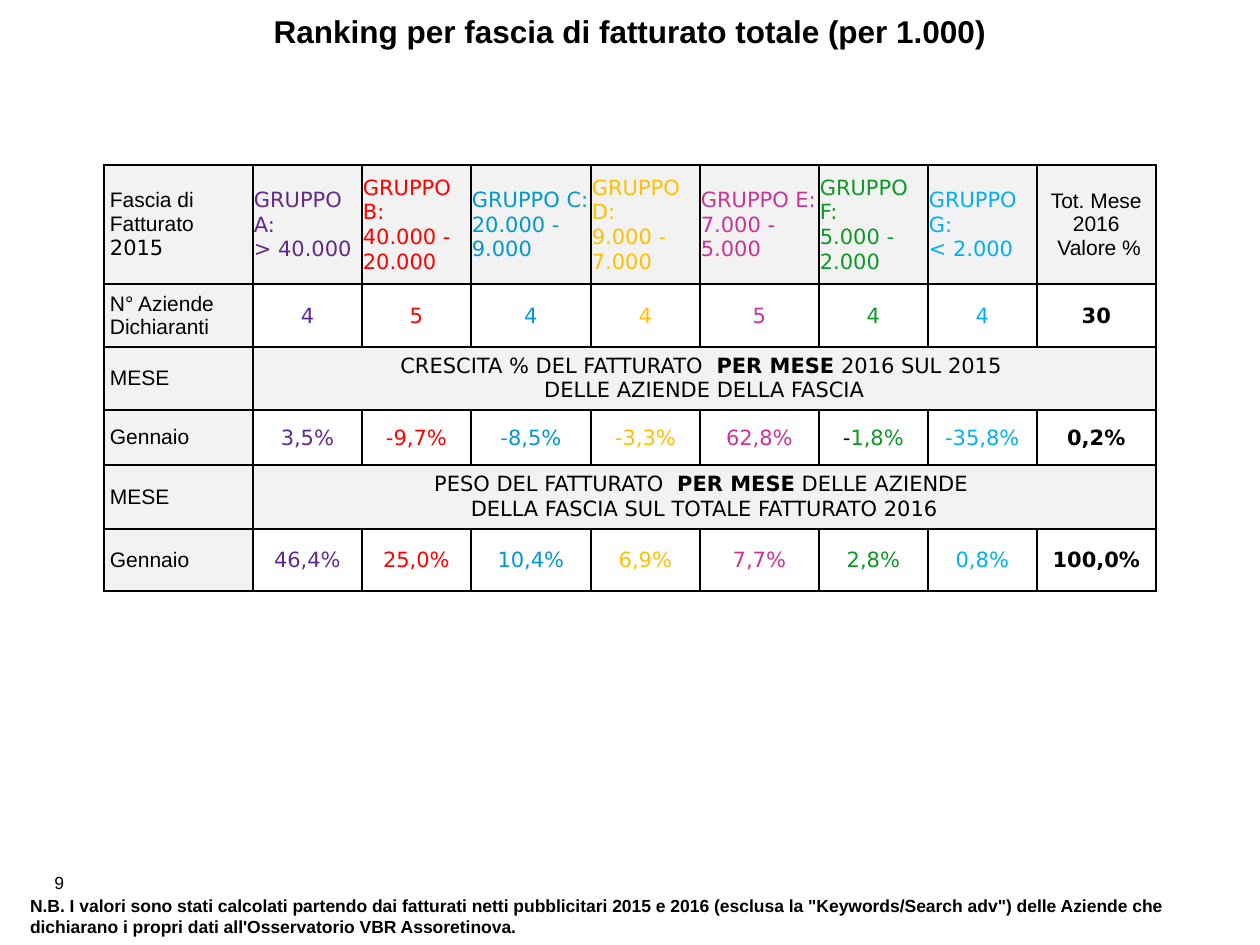
from lxml import etree
from pptx import Presentation
from pptx.dml.color import RGBColor
from pptx.enum.text import MSO_ANCHOR, PP_ALIGN
from pptx.oxml.ns import qn
from pptx.util import Pt

PX = 914400 // 126
LEFT, CENTER, RIGHT = PP_ALIGN.LEFT, PP_ALIGN.CENTER, PP_ALIGN.RIGHT
MIDDLE = MSO_ANCHOR.MIDDLE
SANS, WIDE = "Arial", "DejaVu Sans"

BLACK = RGBColor(0x00, 0x00, 0x00)
WHITE = RGBColor(0xFF, 0xFF, 0xFF)
GREY = RGBColor(0xF2, 0xF2, 0xF2)
PURPLE = RGBColor(0x61, 0x2A, 0x8A)
RED = RGBColor(0xFF, 0x00, 0x00)
TEAL = RGBColor(0x00, 0x99, 0xCC)
AMBER = RGBColor(0xFF, 0xC0, 0x00)
MAGENTA = RGBColor(0xCC, 0x33, 0x99)
GREEN = RGBColor(0x0D, 0x97, 0x27)
SKY = RGBColor(0x00, 0xB0, 0xF0)

# Content
TITLE = "Ranking per fascia di fatturato totale (per 1.000)"
PAGE_NUMBER = "9"
NOTE = ("N.B. I valori sono stati calcolati partendo dai fatturati netti pubblicitari "
        "2015 e 2016 (esclusa la \"Keywords/Search adv\") delle Aziende che dichiarano "
        "i propri dati all'Osservatorio VBR Assoretinova.")
GROUPS = [
    ("GRUPPO A:", "> 40.000", PURPLE),
    ("GRUPPO B:", "40.000 - 20.000", RED),
    ("GRUPPO C:", "20.000 - 9.000", TEAL),
    ("GRUPPO D:", "9.000 - 7.000", AMBER),
    ("GRUPPO E:", "7.000 - 5.000", MAGENTA),
    ("GRUPPO F:", "5.000 - 2.000", GREEN),
    ("GRUPPO G:", "< 2.000", SKY),
]
BAND_HEADING = ["Fascia di Fatturato", "2015"]
TOTAL_HEADING = ["Tot. Mese 2016", " Valore %"]
EMPHASIS = "PER MESE"
VALUE_ROWS = {
    1: ("N° Aziende Dichiaranti", ["4", "5", "4", "4", "5", "4", "4", "30"]),
    3: ("Gennaio", ["3,5%", "-9,7%", "-8,5%", "-3,3%", "62,8%", "-1,8%", "-35,8%", "0,2%"]),
    5: ("Gennaio", ["46,4%", "25,0%", "10,4%", "6,9%", "7,7%", "2,8%", "0,8%", "100,0%"]),
}
SECTION_ROWS = {
    2: ("MESE", ["CRESCITA % DEL FATTURATO  PER MESE 2016 SUL 2015 ",
                 "DELLE AZIENDE DELLA FASCIA"]),
    4: ("MESE", ["PESO DEL FATTURATO  PER MESE DELLE AZIENDE ",
                 "DELLA FASCIA SUL TOTALE FATTURATO 2016"]),
}
BLACK_MINUS = (3, 6)  # row and column whose minus sign stays black

# Layout in px
TABLE_LEFT, TABLE_TOP = 104, 165
COLUMN_WIDTHS = [149, 109, 109, 120, 109, 119, 109, 109, 119]
ROW_HEIGHTS = [119, 63, 63, 55, 64, 62]
LABEL_INSETS = (6, 6, 6, 6)
VALUE_INSETS = (1, 1, 1, 0)
SECTION_INSETS = (13, 6, 13, 6)


def style(run, size, font=SANS, color=BLACK, bold=False):
    run.font.size = Pt(size)
    run.font.name = font
    run.font.color.rgb = color
    run.font.bold = bold


def set_insets(box, insets):
    box.margin_left, box.margin_top, box.margin_right, box.margin_bottom = (
        inset * PX for inset in insets)


def add_label(slide, text, box, size, align=LEFT, bold=True, insets=(13, 6, 13, 6)):
    frame = slide.shapes.add_textbox(*(v * PX for v in box)).text_frame
    frame.word_wrap = True
    set_insets(frame, insets)
    frame.text = text
    paragraph = frame.paragraphs[0]
    paragraph.alignment = align
    style(paragraph.runs[0], size, bold=bold)


def draw_borders(cell):
    properties = cell._tc.get_or_add_tcPr()
    for index, side in enumerate(("a:lnL", "a:lnR", "a:lnT", "a:lnB")):
        line = etree.Element(qn(side), w=str(Pt(1)))
        fill = etree.SubElement(line, qn("a:solidFill"))
        etree.SubElement(fill, qn("a:srgbClr"), val=str(BLACK))
        properties.insert(index, line)


def fill_cell(cell, lines, insets, fill=GREY, align=LEFT, font=SANS, color=BLACK, bold=False):
    cell.fill.solid()
    cell.fill.fore_color.rgb = fill
    cell.vertical_anchor = MIDDLE
    set_insets(cell, insets)
    cell.text = "\n".join(lines)
    for paragraph in cell.text_frame.paragraphs:
        paragraph.alignment = align
        for run in paragraph.runs:
            style(run, 12, font, color, bold)


def split_runs(paragraph, parts):
    """Divide a paragraph into (text, color, bold) runs."""
    paragraph.text = ""
    for text, color, bold in parts:
        run = paragraph.add_run()
        run.text = text
        style(run, 12, WIDE, color, bold)


def build_table(slide):
    table = slide.shapes.add_table(
        len(ROW_HEIGHTS), len(COLUMN_WIDTHS), TABLE_LEFT * PX, TABLE_TOP * PX,
        sum(COLUMN_WIDTHS) * PX, sum(ROW_HEIGHTS) * PX).table
    for column, width in zip(table.columns, COLUMN_WIDTHS):
        column.width = width * PX
    for row, height in zip(table.rows, ROW_HEIGHTS):
        row.height = height * PX
    last = len(COLUMN_WIDTHS) - 1

    # Heading row
    band = table.cell(0, 0)
    fill_cell(band, BAND_HEADING, LABEL_INSETS)
    band.text_frame.paragraphs[1].runs[0].font.name = WIDE
    for column, (group, limits, color) in enumerate(GROUPS, 1):
        fill_cell(table.cell(0, column), [f"{group}\v{limits}"], VALUE_INSETS,
                  font=WIDE, color=color)
    fill_cell(table.cell(0, last), TOTAL_HEADING, LABEL_INSETS, align=CENTER)

    # Value rows, each column in its group's colour
    colors = [color for _, _, color in GROUPS] + [BLACK]
    for row, (label, values) in VALUE_ROWS.items():
        fill_cell(table.cell(row, 0), [label], LABEL_INSETS)
        for column, (value, color) in enumerate(zip(values, colors), 1):
            cell = table.cell(row, column)
            fill_cell(cell, [value], VALUE_INSETS, WHITE, CENTER, WIDE, color, column == last)
            if (row, column) == BLACK_MINUS:
                split_runs(cell.text_frame.paragraphs[0],
                           [(value[0], BLACK, False), (value[1:], color, False)])

    # Section rows, merged across all groups
    for row, (label, lines) in SECTION_ROWS.items():
        fill_cell(table.cell(row, 0), [label], LABEL_INSETS)
        section = table.cell(row, 1)
        section.merge(table.cell(row, last))
        fill_cell(section, lines, SECTION_INSETS, align=CENTER, font=WIDE)
        split_runs(section.text_frame.paragraphs[0],
                   [(part, BLACK, part == EMPHASIS) for part in lines[0].partition(EMPHASIS)])

    for cell in table.iter_cells():
        draw_borders(cell)


def main():
    deck = Presentation()
    deck.slide_width, deck.slide_height = 1260 * PX, 945 * PX
    slide = deck.slides.add_slide(deck.slide_layouts[6])
    add_label(slide, PAGE_NUMBER, (23, 866, 54, 34), 10, RIGHT, bold=False)
    add_label(slide, TITLE, (35, 6, 1190, 50), 18, CENTER)
    add_label(slide, NOTE, (30, 895, 1216, 43), 10, insets=(0, 0, 0, 0))
    build_table(slide)
    deck.save("out.pptx")


if __name__ == "__main__":
    main()
